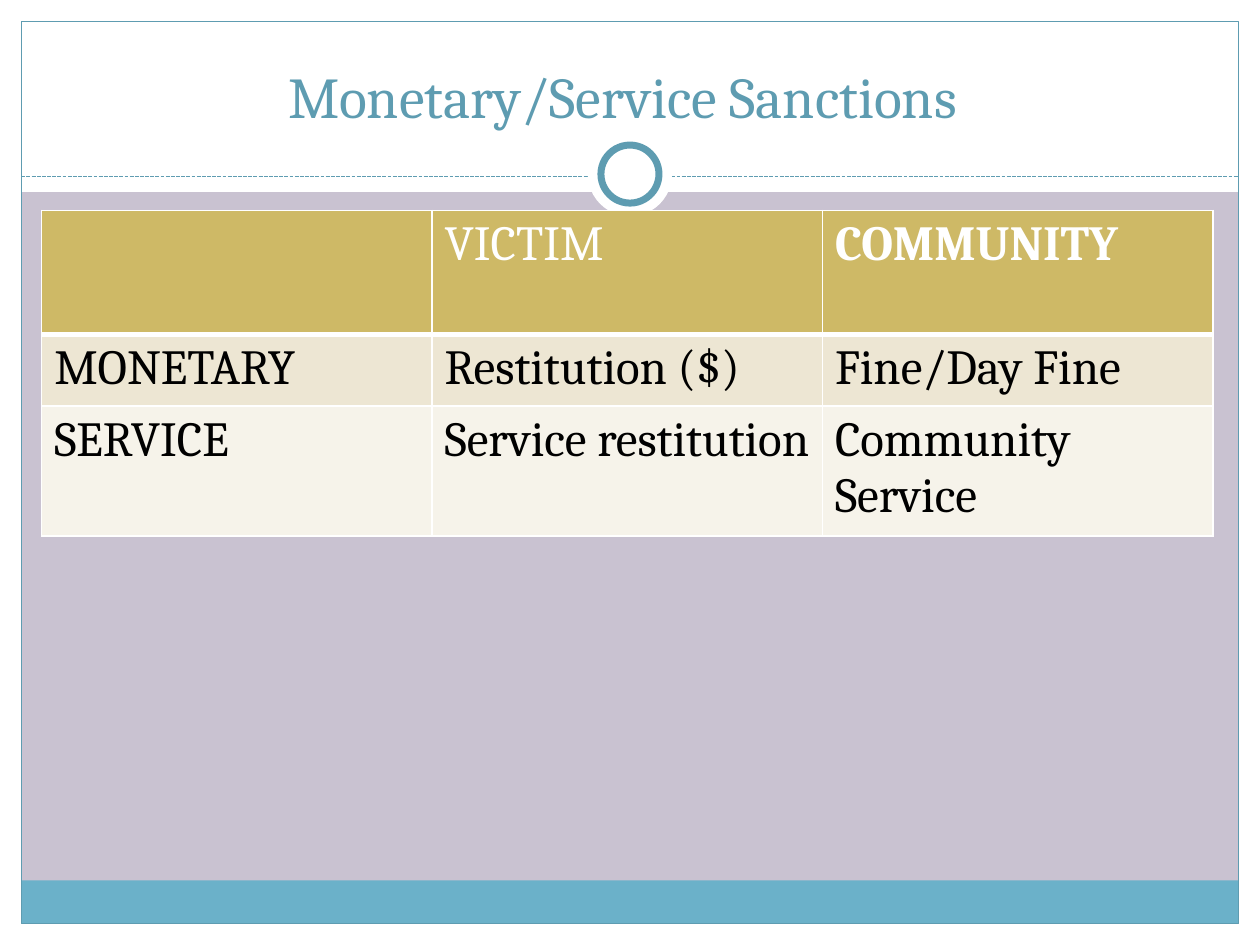
from dataclasses import dataclass
from lxml.etree import SubElement
from pptx import Presentation
from pptx.dml.color import RGBColor
from pptx.enum.dml import MSO_LINE
from pptx.enum.shapes import MSO_CONNECTOR, MSO_SHAPE
from pptx.enum.text import MSO_ANCHOR, PP_ALIGN
from pptx.oxml import parse_xml
from pptx.oxml.ns import nsdecls, qn
from pptx.util import Cm, Pt


@dataclass(frozen=True)
class Theme:
    font: str = "Cambria"
    title_size: int = 33
    cell_size: int = 28
    back: str = "C9C2D1"
    white: str = "FFFFFF"
    black: str = "000000"
    teal: str = "5E9CB1"
    band: str = "6BB1C9"
    gold: str = "CEB966"
    rows: tuple = ("EDE6D3", "F6F3EA")


THEME = Theme()
TITLE = "Monetary/Service Sanctions"
CELLS = [
    ["", "VICTIM", "COMMUNITY"],
    ["MONETARY", "Restitution ($)", "Fine/Day Fine"],
    ["SERVICE", "Service restitution", "Community Service"],
]
BOLD = {"COMMUNITY"}

# Lengths in centimetres
WIDE, HIGH, EDGE = 25.4, 19.05, 0.43
HEAD, FOOT = 3.87, 0.87
RULE = 3.56
RING_Y = 3.51
COL = 7.87
ROWS = [2.5, 1.4, 2.53]


def color(code):
    return RGBColor.from_string(code)


def draw(slide, kind, box, fill=None, line=None, width=0.75):
    shape = slide.shapes.add_shape(kind, *map(Cm, box))
    shape.shadow.inherit = False
    if fill:
        shape.fill.solid()
        shape.fill.fore_color.rgb = color(fill)
    else:
        shape.fill.background()
    if line:
        shape.line.color.rgb = color(line)
        shape.line.width = Pt(width)
    else:
        shape.line.fill.background()


def style(para, size, code, bold=False):
    font = para.font
    font.name, font.size, font.bold = THEME.font, Pt(size), bold
    font.color.rgb = color(code)


def edge(cell, low):
    """Give a cell white borders, with the bottom one low points wide."""
    props = cell._tc.get_or_add_tcPr()
    for i, (side, width) in enumerate(zip("LRTB", (1, 1, 1, low))):
        props.insert(i, parse_xml(
            f'<a:ln{side} {nsdecls("a")} w="{Pt(width)}"><a:solidFill>'
            f'<a:srgbClr val="{THEME.white}"/></a:solidFill></a:ln{side}>'))


def add_frame(slide):
    inner = WIDE - 2 * EDGE
    base = HIGH - EDGE
    rect = MSO_SHAPE.RECTANGLE
    for box in [(0, base, WIDE, EDGE), (0, 0, WIDE, HEAD),
                (0, 0, EDGE, HIGH), (WIDE - EDGE, 0, EDGE, HIGH)]:
        draw(slide, rect, box, THEME.white)
    draw(slide, rect, (EDGE, base - FOOT, inner, FOOT), THEME.band)
    draw(slide, rect, (EDGE, EDGE, inner, base - EDGE), line=THEME.teal)

    rule = slide.shapes.add_connector(
        MSO_CONNECTOR.STRAIGHT, Cm(EDGE), Cm(RULE), Cm(WIDE - EDGE), Cm(RULE))
    rule.line.color.rgb = color(THEME.teal)
    rule.line.width = Pt(0.75)
    rule.line.dash_style = MSO_LINE.SQUARE_DOT
    SubElement(rule._element.spPr, qn("a:effectLst"))

    for size, line in [(1.7, None), (1.17, THEME.teal)]:
        box = (WIDE - size) / 2, RING_Y - size / 2, size, size
        draw(slide, MSO_SHAPE.OVAL, box, THEME.white, line, 4)


def add_title(slide):
    box = slide.shapes.add_textbox(Cm(0.7), Cm(0.64), Cm(23.7), Cm(2.11))
    frame = box.text_frame
    frame.word_wrap = True
    frame.vertical_anchor = MSO_ANCHOR.BOTTOM
    para = frame.paragraphs[0]
    para.text, para.alignment = TITLE, PP_ALIGN.CENTER
    style(para, THEME.title_size, THEME.teal)


def add_grid(slide):
    cols = len(CELLS[0])
    table = slide.shapes.add_table(
        len(CELLS), cols, Cm(0.84), Cm(4.24), Cm(COL * cols), Cm(sum(ROWS))).table
    for col in table.columns:
        col.width = Cm(COL)
    for r, words in enumerate(CELLS):
        table.rows[r].height = Cm(ROWS[r])
        fill = THEME.rows[r - 1] if r else THEME.gold
        ink = THEME.black if r else THEME.white
        for c, word in enumerate(words):
            cell = table.cell(r, c)
            cell.fill.solid()
            cell.fill.fore_color.rgb = color(fill)
            edge(cell, 1 if r else 3)
            cell.text = word
            style(cell.text_frame.paragraphs[0], THEME.cell_size, ink, word in BOLD)


def main():
    deck = Presentation()
    deck.slide_width, deck.slide_height = Cm(WIDE), Cm(HIGH)
    slide = deck.slides.add_slide(deck.slide_layouts[6])
    slide.background.fill.solid()
    slide.background.fill.fore_color.rgb = color(THEME.back)
    add_frame(slide)
    add_title(slide)
    add_grid(slide)
    deck.save("out.pptx")


if __name__ == "__main__":
    main()
